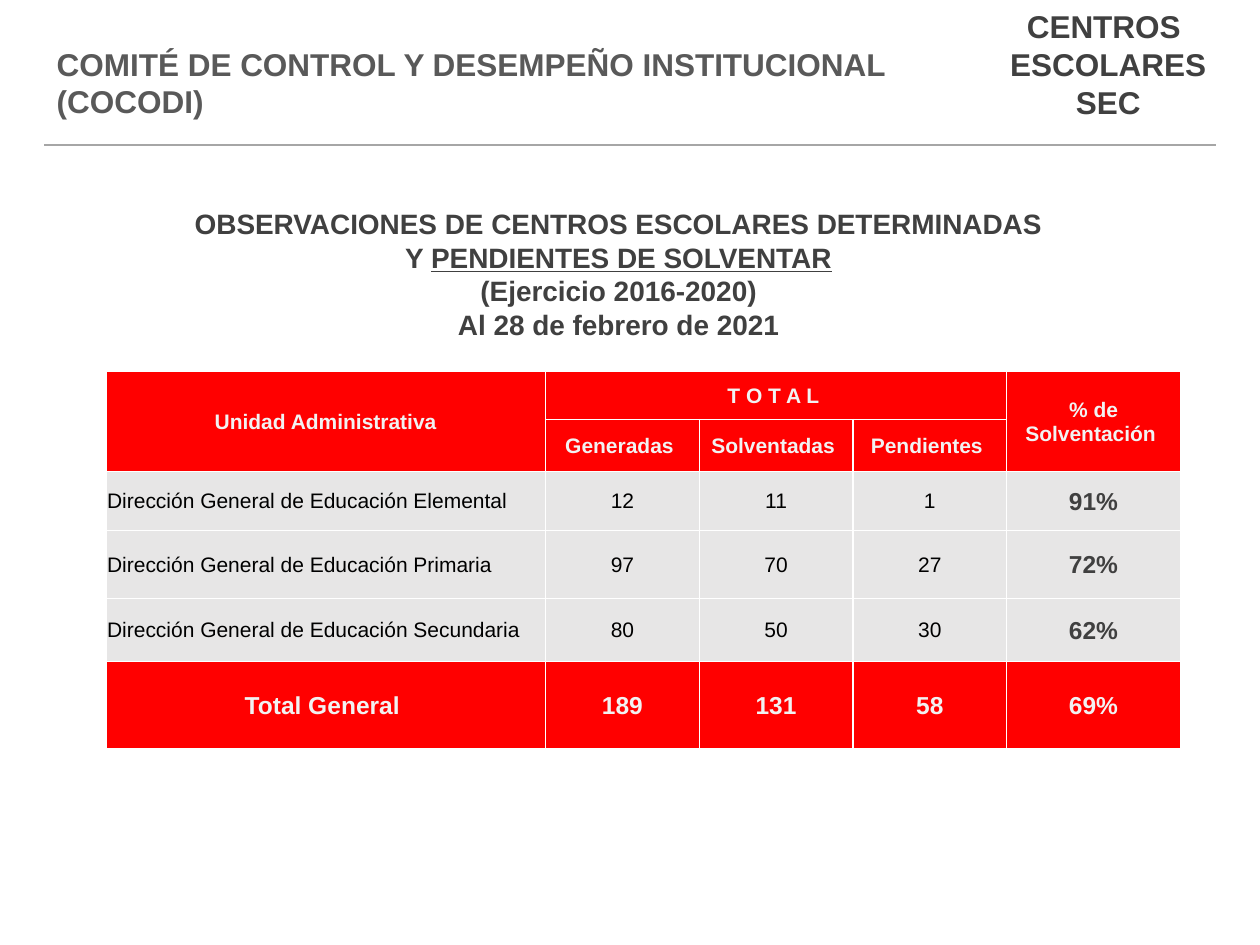
from lxml.etree import SubElement
from pptx import Presentation
from pptx.dml.color import RGBColor
from pptx.enum.shapes import MSO_CONNECTOR, MSO_SHAPE
from pptx.enum.text import MSO_ANCHOR, PP_ALIGN
from pptx.oxml import parse_xml
from pptx.oxml.ns import nsdecls, qn
from pptx.util import Inches, Pt

RED, GREY, WHITE = "FF0000", "E7E6E6", "FFFFFF"
DARK, PALE, BLACK = "404040", "F2F2F2", "000000"
LEFT, CENTER = PP_ALIGN.LEFT, PP_ALIGN.CENTER

# Each paragraph is a list of (text, underlined) spans.
HEADER = [[("COMITÉ DE CONTROL Y DESEMPEÑO INSTITUCIONAL (COCODI)", False)]]
AREA = [[("CENTROS ", False)], [("ESCOLARES", False)], [("SEC", False)]]
SUBTITLE = [
    [("OBSERVACIONES DE CENTROS ESCOLARES DETERMINADAS", False)],
    [("Y ", False), ("PENDIENTES DE SOLVENTAR", True)],
    [("(Ejercicio 2016-2020)", False)],
    [("Al 28 de febrero de 2021", False)],
]

ROWS = [
    ["Unidad Administrativa", "T O T A L ", "", "", "% de Solventación "],
    ["", "Generadas ", "Solventadas ", "Pendientes ", ""],
    ["Dirección General de Educación Elemental", "12", "11", "1", "91%"],
    ["Dirección General de Educación Primaria", "97", "70", "27", "72%"],
    ["Dirección General de Educación Secundaria", "80", "50", "30", "62%"],
    ["Total General ", "189", "131", "58", "69%"],
]
MERGES = [((0, 0), (1, 0)), ((0, 1), (0, 3)), ((0, 4), (1, 4))]
COLUMN_WIDTHS = [3.49, 1.22, 1.22, 1.22, 1.38]
ROW_HEIGHTS = [0.38, 0.41, 0.47, 0.54, 0.5, 0.69]
HEAD_ROWS, TOTAL_ROW, RATE_COLUMN = 2, len(ROWS) - 1, 4


def rgb(value):
    return RGBColor.from_string(value)


def write(frame, paragraphs, size, color, bold=True, align=CENTER):
    for index, spans in enumerate(paragraphs):
        para = frame.paragraphs[0] if index == 0 else frame.add_paragraph()
        para.alignment = align
        for text, underlined in spans:
            span = para.add_run()
            span.text = text
            span.font.color.rgb = rgb(color)
            look = {"name": "Arial", "size": Pt(size), "bold": bold, "underline": underlined}
            for name, value in look.items():
                setattr(span.font, name, value)


def place(shape, left, top, width, height):
    for name, value in zip(("left", "top", "width", "height"), (left, top, width, height)):
        setattr(shape, name, Inches(value))


def draw_borders(cell, color, points):
    properties = cell._tc.get_or_add_tcPr()
    for index, side in enumerate(("lnL", "lnR", "lnT", "lnB")):
        properties.insert(index, parse_xml(
            f'<a:{side} {nsdecls("a")} w="{Pt(points)}"><a:solidFill>'
            f'<a:srgbClr val="{color}"/></a:solidFill></a:{side}>'))


def cell_look(row, column):
    """Return fill, size, colour, bold and alignment for a table position."""
    if row < HEAD_ROWS:
        return RED, 12, PALE, True, CENTER
    if row == TOTAL_ROW:
        return RED, 14, PALE, True, CENTER
    if column == RATE_COLUMN:
        return GREY, 14, DARK, True, CENTER
    return GREY, 12, BLACK, False, CENTER if column else LEFT


def add_observations(page):
    table = page.shapes.add_table(
        len(ROWS), len(COLUMN_WIDTHS), Inches(0.84), Inches(2.95),
        Inches(sum(COLUMN_WIDTHS)), Inches(sum(ROW_HEIGHTS))).table
    for column, width in zip(table.columns, COLUMN_WIDTHS):
        column.width = Inches(width)
    for row, height in zip(table.rows, ROW_HEIGHTS):
        row.height = Inches(height)
    cell_format = {
        "vertical_anchor": MSO_ANCHOR.MIDDLE, "margin_left": Inches(0.01),
        "margin_right": Inches(0.01), "margin_top": Inches(0.01), "margin_bottom": 0,
    }
    for r, texts in enumerate(ROWS):
        for c, text in enumerate(texts):
            cell = table.cell(r, c)
            fill, size, color, bold, align = cell_look(r, c)
            for name, value in cell_format.items():
                setattr(cell, name, value)
            cell.fill.solid()
            cell.fill.fore_color.rgb = rgb(fill)
            draw_borders(cell, WHITE, 1)
            if text:
                write(cell.text_frame, [[(text, False)]], size, color, bold, align)
    for first, last in MERGES:
        table.cell(*first).merge(table.cell(*last))


def main():
    deck = Presentation()
    deck.slide_width, deck.slide_height = Inches(10), Inches(7.5)
    page = deck.slides.add_slide(deck.slide_layouts[5])

    title = page.shapes.title
    place(title, 0.35, 0.3, 7.02, 0.71)
    write(title.text_frame, HEADER, 18, "595959", align=LEFT)

    subtitle = page.shapes.add_textbox(Inches(1.03), Inches(1.59), Inches(7.76), Inches(1.18))
    subtitle.text_frame.word_wrap = True
    write(subtitle.text_frame, SUBTITLE, 16, DARK)

    area = page.shapes.add_shape(
        MSO_SHAPE.RECTANGLE, Inches(7.72), 0, Inches(2.15), Inches(1.01))
    area.shadow.inherit = False
    area.fill.solid()
    area.fill.fore_color.rgb = rgb(WHITE)
    area.line.fill.background()
    write(area.text_frame, AREA, 18, DARK)

    rule = page.shapes.add_connector(
        MSO_CONNECTOR.STRAIGHT, Inches(0.35), Inches(1.15), Inches(9.65), Inches(1.15))
    rule.line.color.rgb = rgb("A6A6A6")
    rule.line.width = Pt(1.5)
    SubElement(rule._element.spPr, qn("a:effectLst"))

    add_observations(page)
    deck.save("out.pptx")


if __name__ == "__main__":
    main()
